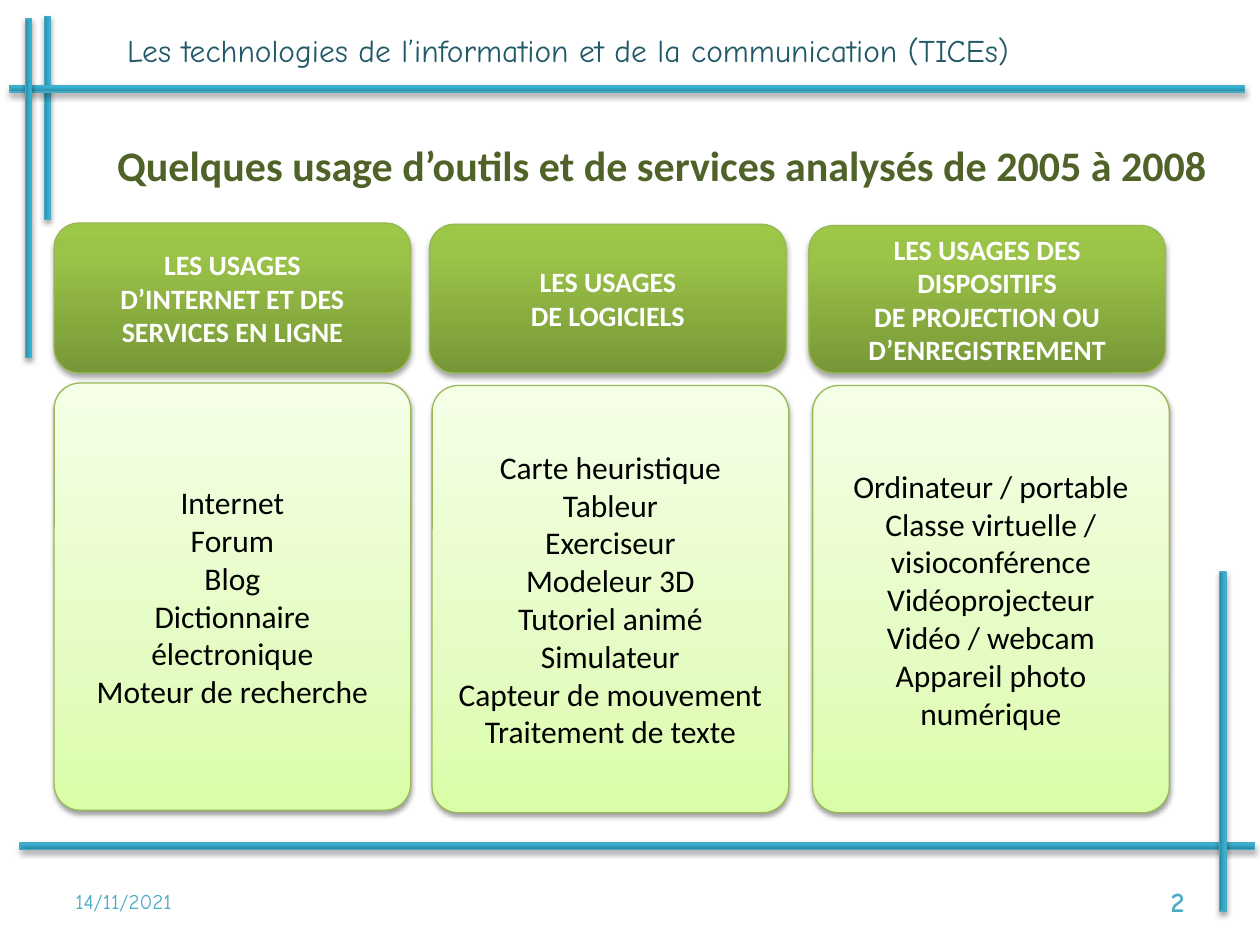
from lxml import etree
from pptx import Presentation
from pptx.dml.color import RGBColor
from pptx.enum.shapes import MSO_SHAPE
from pptx.enum.text import MSO_ANCHOR, MSO_AUTO_SIZE, PP_ALIGN
from pptx.oxml import parse_xml
from pptx.oxml.ns import nsdecls, qn
from pptx.util import Inches, Pt

RECT, ROUND = MSO_SHAPE.RECTANGLE, MSO_SHAPE.ROUNDED_RECTANGLE
TOP, MIDDLE = MSO_ANCHOR.TOP, MSO_ANCHOR.MIDDLE
LEFT, CENTER, RIGHT = PP_ALIGN.LEFT, PP_ALIGN.CENTER, PP_ALIGN.RIGHT
FIT, NO_FIT = MSO_AUTO_SIZE.SHAPE_TO_FIT_TEXT, MSO_AUTO_SIZE.NONE
BODY_FONT, DECO_FONT = "Calibri", "Comic Neue"

COURSE = "Les technologies de l’information et de la communication (TICEs)"
TITLE = "Quelques usage d’outils et de services analysés de 2005 à 2008"
DATE, PAGE = "14/11/2021", "2"

# Each column: heading lines, list items, heading (left, top), list (left, top)
COLUMNS = [
    (["LES USAGES", "D’INTERNET ET DES", "SERVICES EN LIGNE"],
     ["Internet", "Forum", "Blog", "Dictionnaire électronique",
      "Moteur de recherche"],
     (0.43, 1.77), (0.43, 3.04)),
    (["LES USAGES", "DE LOGICIELS"],
     ["Carte heuristique", "Tableur", "Exerciseur", "Modeleur 3D",
      "Tutoriel animé", "Simulateur", "Capteur de mouvement",
      "Traitement de texte"],
     (3.41, 1.78), (3.43, 3.06)),
    (["LES USAGES DES DISPOSITIFS", "DE PROJECTION OU", "D’ENREGISTREMENT"],
     ["Ordinateur / portable", "Classe virtuelle / visioconférence",
      "Vidéoprojecteur", "Vidéo / webcam", "Appareil photo numérique"],
     (6.42, 1.79), (6.45, 3.06)),
]
CARD_W, HEAD_BOTTOM, LIST_H = 2.83, 2.96, 3.39

# Bars: left, top, length, rotation
BAR_H = 0.05
BARS = [(0.16, 6.69, 9.8, 0), (8.36, 5.86, 2.69, 90), (-0.43, 0.91, 1.61, 90),
        (0.08, 0.68, 9.8, 0), (-1.12, 1.47, 2.69, 90)]

# Styles: gradient stops from bottom to top, line, shadow opacity and distance
BAR = ([(0, "2A88A2"), (80, "37B1D2"), (100, "34B4D6")], "46AAC5", 35, 1.8)
HEAD = ([(0, "779737"), (80, "9BC348"), (100, "9DC746")], "98B955", 35, 1.8)
LIST = ([(0, "DAFDA7"), (35, "E4FCC2"), (100, "F5FFE7")], "98B955", 38, 1.6)


def rgb(value):
    return RGBColor.from_string(value)


def add_panel(kind, box, style):
    """Add a shape with an upward gradient, a thin line and a soft shadow."""
    stops, line, opacity, distance = style
    sp = s.shapes.add_shape(kind, *map(Inches, box))
    sp.line.color.rgb = rgb(line)
    sp.line.width = Pt(0.75)
    gradient = "".join(
        f'<a:gs pos="{pos * 1000}"><a:srgbClr val="{color}"/></a:gs>'
        for pos, color in stops)
    props = sp.element.spPr
    props.find(qn("a:prstGeom")).addnext(parse_xml(
        f'<a:gradFill {nsdecls("a")} rotWithShape="1"><a:gsLst>{gradient}'
        '</a:gsLst><a:lin ang="16200000" scaled="0"/></a:gradFill>'))
    sp.shadow.inherit = False
    shadow = etree.SubElement(
        props.find(qn("a:effectLst")), qn("a:outerShdw"),
        blurRad=str(Pt(3.1)), dist=str(Pt(distance)), dir="5400000",
        rotWithShape="0")
    color = etree.SubElement(shadow, qn("a:srgbClr"), val="000000")
    etree.SubElement(color, qn("a:alpha"), val=str(opacity * 1000))
    return sp


def set_text(sp, lines, size, color, font=BODY_FONT, bold=False, align=LEFT,
             anchor=MIDDLE, wrap=True):
    tf = sp.text_frame
    tf.text = "\n".join(lines)
    tf.word_wrap = wrap
    tf.auto_size = NO_FIT if wrap else FIT
    tf.vertical_anchor = anchor
    for p in tf.paragraphs:
        p.alignment = align
        for r in p.runs:
            r.font.name, r.font.size, r.font.bold = font, Pt(size), bold
            r.font.color.rgb = rgb(color)


def add_label(box, text, size, color, **options):
    sp = s.shapes.add_textbox(*map(Inches, box))
    set_text(sp, [text], size, color, font=DECO_FONT, **options)


prs = Presentation()
prs.slide_width, prs.slide_height = Inches(10), Inches(7.5)
s = prs.slides.add_slide(prs.slide_layouts[5])

for left, top, length, rotation in BARS:
    add_panel(RECT, (left, top, length, BAR_H), BAR).rotation = rotation

add_label((0.91, 0.2, 7.81, 0.4), COURSE, 18, "215968", anchor=TOP, wrap=False)

title = s.shapes.title
title.left, title.top, title.width, title.height = map(
    Inches, (0.83, 1.06, 8.94, 0.5))
set_text(title, [TITLE], 24, "4F6228", bold=True, anchor=TOP, wrap=False)

for heading, items, (head_x, head_y), (list_x, list_y) in COLUMNS:
    head = add_panel(ROUND, (head_x, head_y, CARD_W, HEAD_BOTTOM - head_y), HEAD)
    set_text(head, heading, 16, "FFFFFF", bold=True, align=CENTER)
    card = add_panel(ROUND, (list_x, list_y, CARD_W, LIST_H), LIST)
    card.adjustments[0] = 0.073
    set_text(card, items, 18, "000000", align=CENTER)

add_label((7.17, 6.95, 2.33, 0.4), PAGE, 16, "4BACC6", bold=True, align=RIGHT)
add_label((0.5, 6.95, 2.33, 0.4), DATE, 12, "4BACC6")

prs.save("out.pptx")
